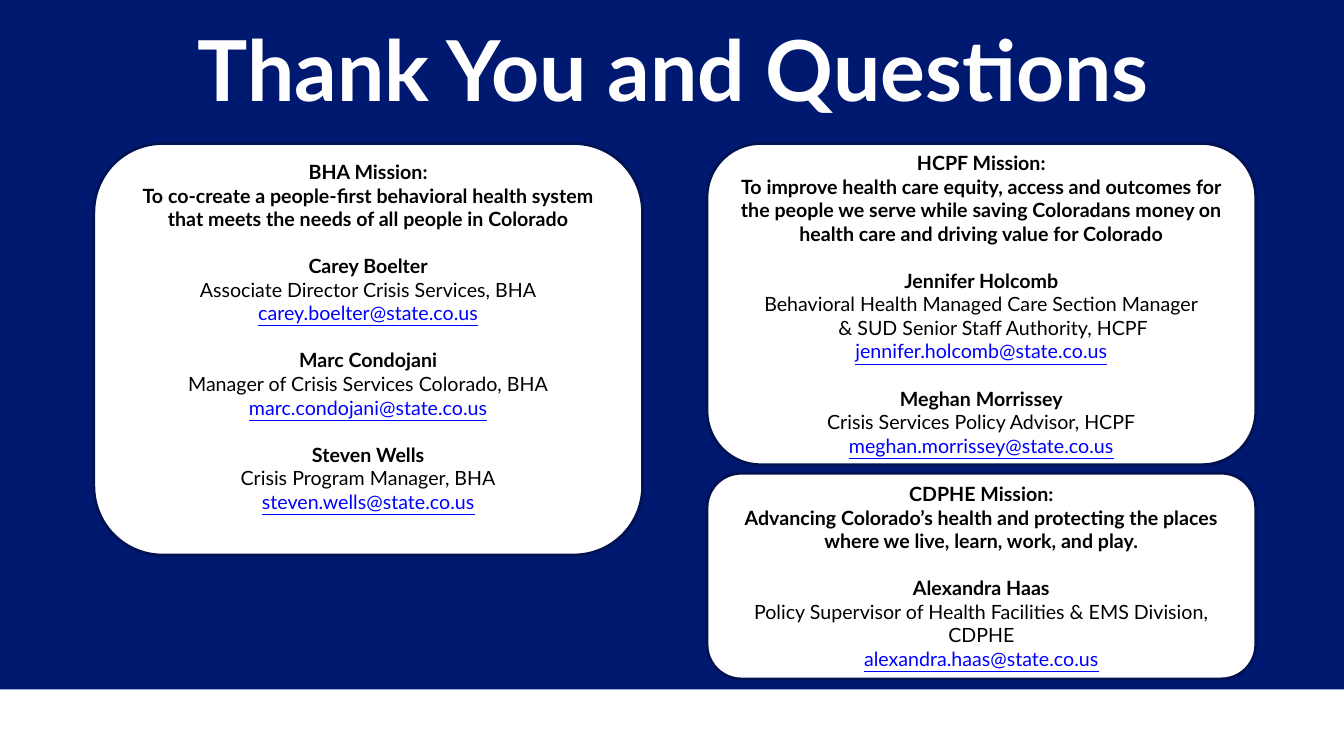
import pptx
import pptx.util
import pptx.dml.color
import pptx.enum.shapes
import pptx.enum.text

Pt = pptx.util.Pt
ALIGN = pptx.enum.text.PP_ALIGN
ANCHOR = pptx.enum.text.MSO_ANCHOR
KIND = pptx.enum.shapes.MSO_SHAPE

COLORS = {
    "navy": "001970",
    "edge": "001251",
    "white": "FFFFFF",
    "black": "000000",
    "mail": "0000FF",
}
FONT = "Lato"
SIZE = 14
GAP = 16.8  # one line of body text
WIDE = 392
LEFT, RIGHT = 67, 505
TOP = 102.5

# Each person: name, role lines, e-mail
BHA = [
    ("Carey Boelter", ["Associate Director Crisis Services, BHA"],
     "carey.boelter@state.co.us"),
    ("Marc Condojani", ["Manager of Crisis Services Colorado, BHA"],
     "marc.condojani@state.co.us"),
    ("Steven Wells", ["Crisis Program Manager, BHA"],
     "steven.wells@state.co.us"),
]
HCPF = [
    ("Jennifer Holcomb",
     ["Behavioral Health Managed Care Section Manager",
      "& SUD Senior Staff Authority, HCPF"],
     "jennifer.holcomb@state.co.us"),
    ("Meghan Morrissey", ["Crisis Services Policy Advisor, HCPF"],
     "meghan.morrissey@state.co.us"),
]
CDPHE = [
    ("Alexandra Haas",
     ["Policy Supervisor of Health Facilities & EMS Division, CDPHE"],
     "alexandra.haas@state.co.us"),
]


def color(name):
    return pptx.dml.color.RGBColor.from_string(COLORS[name])


def style(para, size, tint, bold=False, line=False):
    para.alignment = ALIGN.CENTER
    for run in para.runs:
        font = run.font
        font.name = FONT
        font.size = Pt(size)
        font.bold = bold
        font.underline = line
        font.color.rgb = color(tint)


def add_box(slide, kind, left, top, width, height):
    box = slide.shapes.add_shape(
        kind, Pt(left), Pt(top), Pt(width), Pt(height))
    box.shadow.inherit = False
    box.fill.solid()
    box.fill.fore_color.rgb = color("white")
    box.line.fill.background()
    return box


def add_title(slide, text):
    title = slide.shapes.title
    title.left, title.top = Pt(12), Pt(13.5)
    title.width, title.height = Pt(938), Pt(75.5)
    frame = title.text_frame
    frame.text = text
    frame.word_wrap = True
    frame.auto_size = pptx.enum.text.MSO_AUTO_SIZE.NONE
    frame.vertical_anchor = ANCHOR.BOTTOM
    para = frame.paragraphs[0]
    para.line_spacing = 0.9
    style(para, 60, "white", bold=True)


def add_card(slide, left, top, height, agency, goal, staff, foot=3.6):
    card = add_box(slide, KIND.ROUNDED_RECTANGLE, left, top, WIDE, height)
    card.adjustments[0] = 0.167
    card.line.color.rgb = color("edge")
    card.line.width = Pt(2)
    frame = card.text_frame
    frame.word_wrap = True
    frame.vertical_anchor = ANCHOR.MIDDLE
    frame.margin_bottom = Pt(foot)

    # Mission
    head = frame.paragraphs[0]
    head.text = f"{agency} Mission:"
    style(head, SIZE, "black", bold=True)
    aim = frame.add_paragraph()
    aim.text = goal
    style(aim, SIZE, "black", bold=True)

    # Contacts
    for name, roles, mail in staff:
        para = frame.add_paragraph()
        para.text = name
        para.space_before = Pt(GAP)
        style(para, SIZE, "black", bold=True)
        for i, role in enumerate(roles):
            para = frame.add_paragraph()
            para.text = role
            style(para, SIZE, "black")
            if i:  # a second role line sits a little to the right
                para._p.get_or_add_pPr().set("marL", str(Pt(17)))
        para = frame.add_paragraph()
        para.text = mail
        style(para, SIZE, "mail", line=True)


def main():
    deck = pptx.Presentation()
    deck.slide_width, deck.slide_height = Pt(960), Pt(540)
    slide = deck.slides.add_slide(deck.slide_layouts[5])

    # Ground and footer band
    slide.background.fill.solid()
    slide.background.fill.fore_color.rgb = color("navy")
    add_box(slide, KIND.RECTANGLE, 0, 492.5, 960, 47.5)

    add_title(slide, "Thank You and Questions")

    # Agency cards
    add_card(slide, LEFT, TOP, 294, "BHA",
             "To co-create a people-first behavioral health system that "
             "meets the needs of all people in Colorado", BHA, foot=21.6)
    add_card(slide, RIGHT, TOP, 229.5, "HCPF",
             "To improve health care equity, access and outcomes for the "
             "people we serve while saving Coloradans money on health care "
             "and driving value for Colorado", HCPF)
    add_card(slide, RIGHT, 338, 147, "CDPHE",
             "Advancing Colorado’s health and protecting the places where "
             "we live, learn, work, and play.", CDPHE)

    deck.save("out.pptx")


if __name__ == "__main__":
    main()
